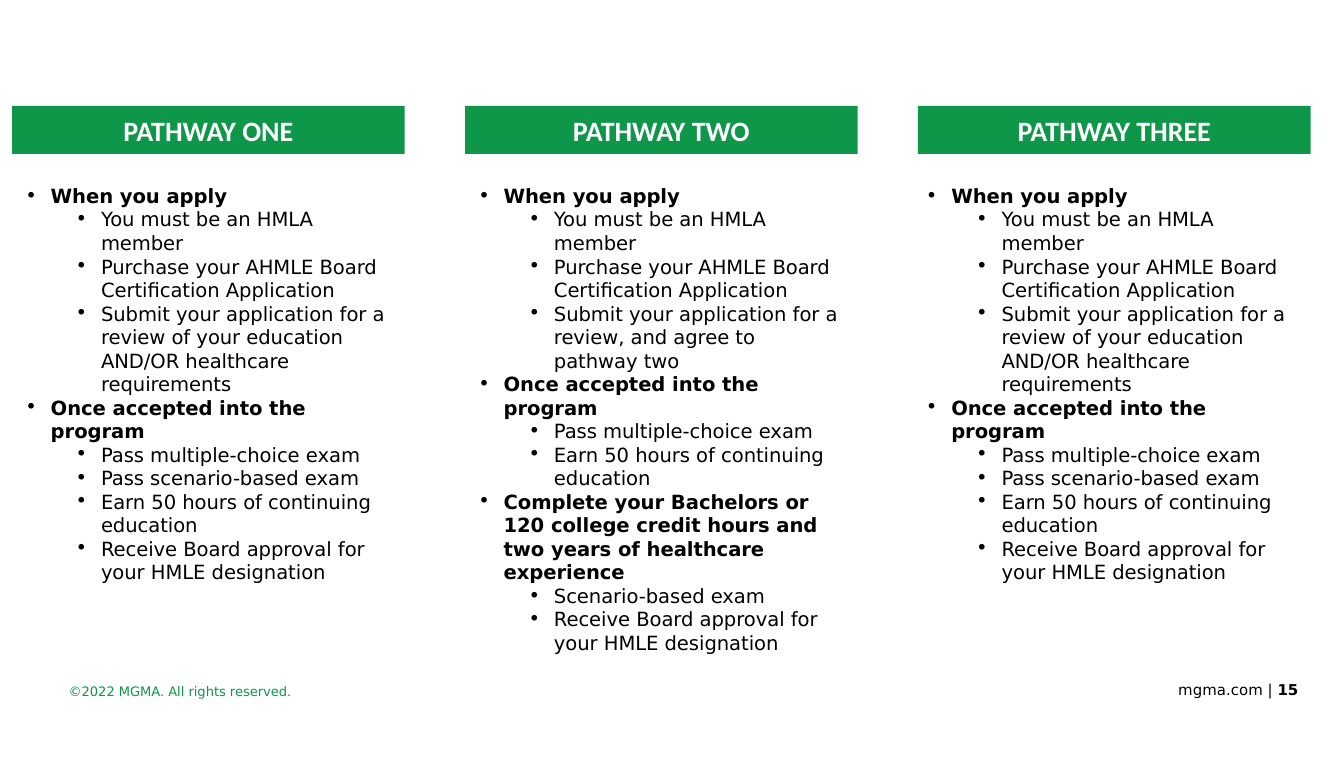
import pptx
import pptx.util
import pptx.dml.color
import pptx.enum.shapes
import pptx.enum.text
import pptx.oxml.ns
import lxml.etree

Cm = pptx.util.Cm
Pt = pptx.util.Pt
ALIGN = pptx.enum.text.PP_ALIGN
GREEN = pptx.dml.color.RGBColor(0x0E, 0x96, 0x49)
WHITE = pptx.dml.color.RGBColor(0xFF, 0xFF, 0xFF)
BLACK = pptx.dml.color.RGBColor(0, 0, 0)
SANS = "DejaVu Sans"

APPLY = "When you apply"
ENTRY = ["You must be an HMLA member",
         "Purchase your AHMLE Board Certification Application"]
ACCEPT = "Once accepted into the program"
CHOICE = "Pass multiple-choice exam"
HOURS = "Earn 50 hours of continuing education"
BOARD = "Receive Board approval for your HMLE designation"

DIRECT = [
    (APPLY, ENTRY + ["Submit your application for a review of your education "
                     "AND/OR healthcare requirements"]),
    (ACCEPT, [CHOICE, "Pass scenario-based exam", HOURS, BOARD]),
]
STAGED = [
    (APPLY, ENTRY + ["Submit your application for a review, and agree to pathway two"]),
    (ACCEPT, [CHOICE, HOURS]),
    ("Complete your Bachelors or 120 college credit hours and two years of "
     "healthcare experience", ["Scenario-based exam", BOARD]),
]


def add_run(para, text, size, color, bold=False, face=SANS):
    """Append one formatted run to a paragraph."""
    run = para.add_run()
    run.text = text
    run.font.name = face
    run.font.size = Pt(size)
    run.font.bold = bold
    run.font.color.rgb = color


def add_box(slide, left, top, width, height, inset=None):
    """Add a wrapping text box and return its frame."""
    frame = slide.shapes.add_textbox(Cm(left), Cm(top), Cm(width), Cm(height)).text_frame
    frame.word_wrap = True
    if inset is not None:
        frame.margin_left = frame.margin_right = Cm(inset)
        frame.margin_top = frame.margin_bottom = Cm(inset)
    return frame


def set_bullet(para, level):
    """Give a paragraph a hanging round bullet."""
    para.level = level
    props = para._p.get_or_add_pPr()
    props.set("marL", str(Cm(0.48 + 0.95 * level)))
    props.set("indent", str(-Cm(0.48)))
    face = lxml.etree.SubElement(props, pptx.oxml.ns.qn("a:buFont"))
    face.set("typeface", SANS)
    mark = lxml.etree.SubElement(props, pptx.oxml.ns.qn("a:buChar"))
    mark.set("char", "•")


def add_header(slide, left, top, width, height, title):
    """Draw the green header bar of a pathway."""
    bar = slide.shapes.add_shape(pptx.enum.shapes.MSO_SHAPE.RECTANGLE,
                                 Cm(left), Cm(top), Cm(width), Cm(height))
    bar.shadow.inherit = False
    bar.fill.solid()
    bar.fill.fore_color.rgb = GREEN
    bar.line.fill.background()
    bar.text_frame.vertical_anchor = pptx.enum.text.MSO_ANCHOR.MIDDLE
    para = bar.text_frame.paragraphs[0]
    para.alignment = ALIGN.CENTER
    para.space_after = Pt(4.5)
    add_run(para, title, 15, WHITE, True, "Calibri")


def add_steps(slide, left, top, width, height, stages):
    """Write the stages of a pathway as a two-level list."""
    frame = add_box(slide, left, top, width, height)
    rows = [(text, level) for head, steps in stages
            for text, level in [(head, 0)] + [(step, 1) for step in steps]]
    for index, (text, level) in enumerate(rows):
        para = frame.add_paragraph() if index else frame.paragraphs[0]
        set_bullet(para, level)
        add_run(para, text, 10.5, BLACK, level == 0)


def add_pathway(slide, left, top, width, height, title, stages, shift):
    """Place a header bar with its list below."""
    add_header(slide, left, top, width, 0.91, title)
    add_steps(slide, left + shift, top + 1.35, width, height - 1.35, stages)


def add_footer(slide, left, top, width, height):
    """Place the rights line on the left and the page mark on the right."""
    rights = add_box(slide, left, top + 0.05, 4.6, height, 0).paragraphs[0]
    add_run(rights, "©2022 MGMA. All rights reserved.", 7, GREEN)
    mark = add_box(slide, left + width - 2.95, top, 2.95, height, 0).paragraphs[0]
    mark.alignment = ALIGN.RIGHT
    add_run(mark, "mgma.com | ", 8, BLACK)
    add_run(mark, "15", 8, BLACK, True)


def main():
    """Build the pathway slide and save it."""
    deck = pptx.Presentation()
    deck.slide_width, deck.slide_height = Cm(25.4), Cm(14.3)
    slide = deck.slides.add_slide(deck.slide_layouts[6])
    add_footer(slide, 1.3, 12.86, 23.24, 0.33)
    paths = [("PATHWAY ONE", DIRECT, 0, 9.25),
             ("PATHWAY TWO", STAGED, 0, 10.6),
             ("PATHWAY THREE", DIRECT, -0.1, 9.25)]
    for index, (title, stages, shift, height) in enumerate(paths):
        add_pathway(slide, 0.23 + 8.56 * index, 2.0, 7.42, height, title, stages, shift)
    deck.save("out.pptx")


if __name__ == "__main__":
    main()
